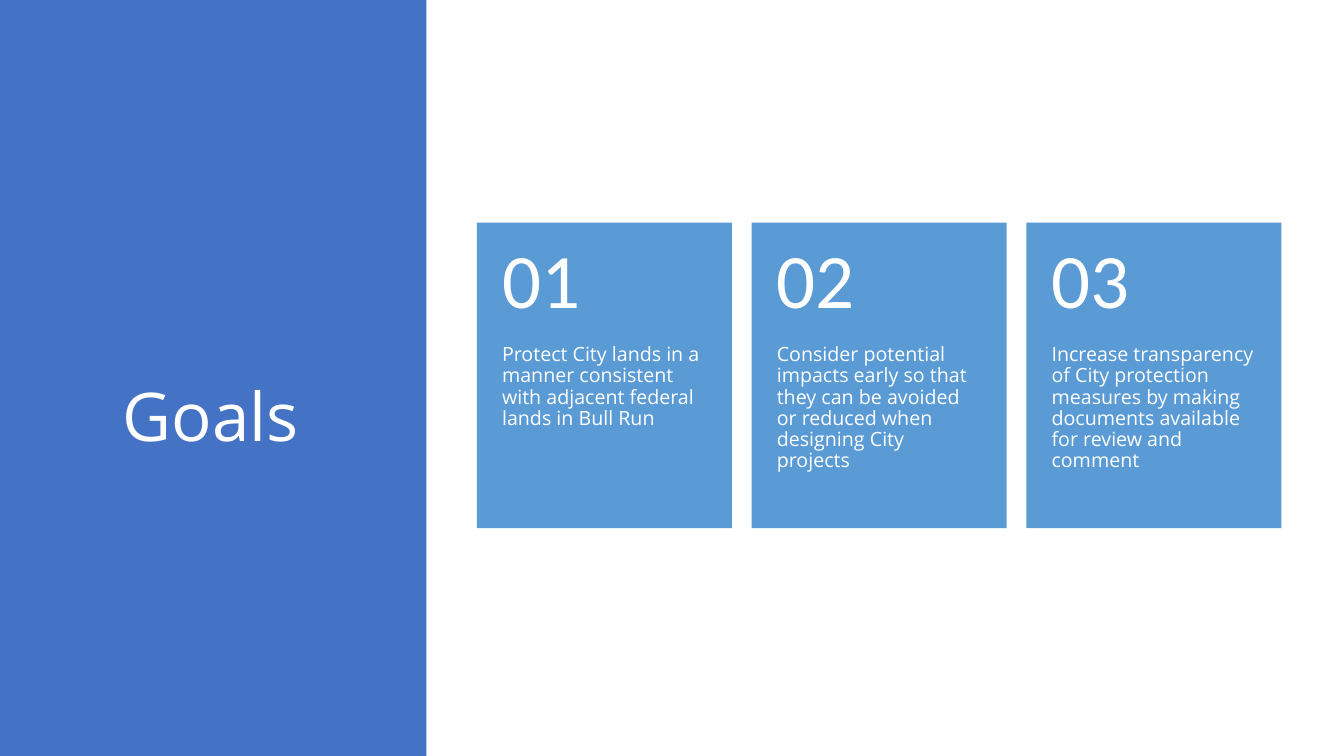
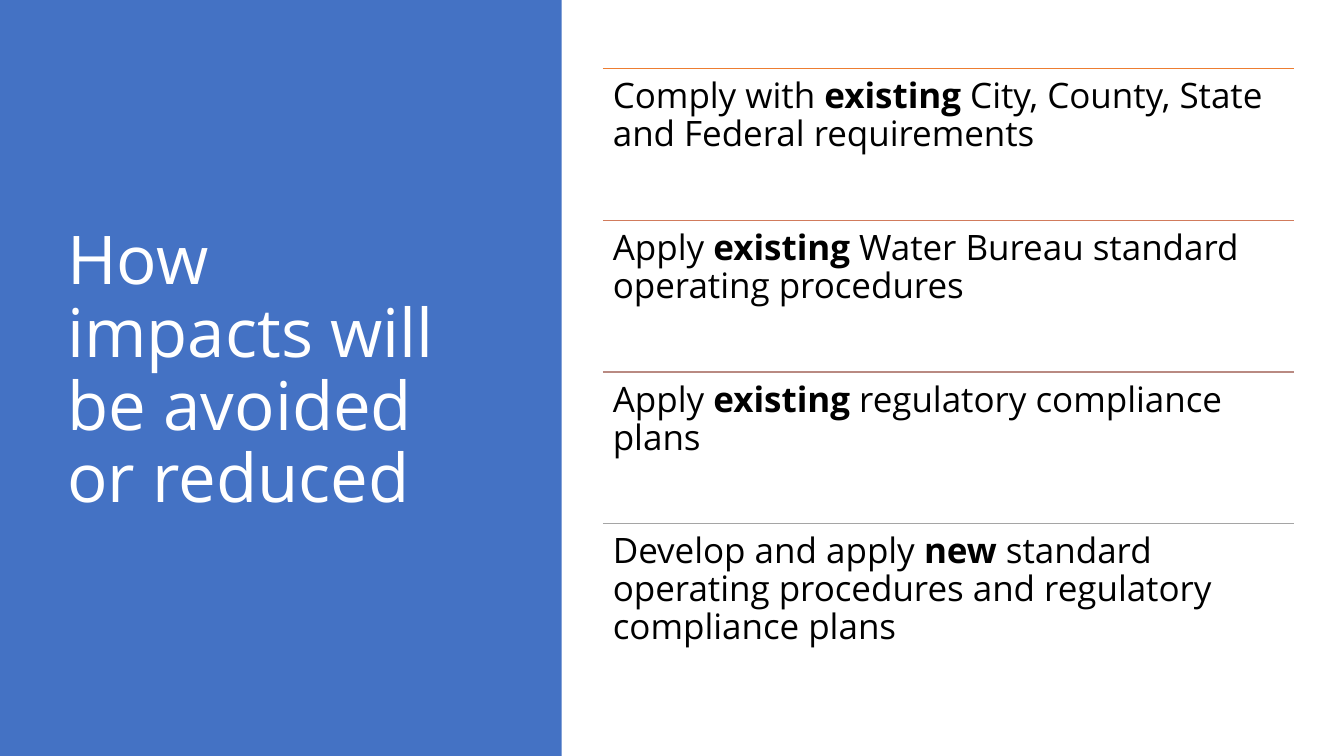
import pptx
import pptx.dml.color
import pptx.enum.shapes
import pptx.enum.text
import pptx.oxml.ns
import pptx.util
from lxml import etree

Inches = pptx.util.Inches
Pt = pptx.util.Pt
ALIGN = pptx.enum.text.PP_ALIGN
ANCHOR = pptx.enum.text.MSO_ANCHOR

SLIDE_WIDTH, SLIDE_HEIGHT = 13.33, 7.5
PANEL_BLUE, CARD_BLUE = "4472C4", "5B9BD5"
WHITE, BLACK = "FFFFFF", "000000"
FONT, NUMBER_FONT = "Open Sans", "Calibri"

GOALS = [
    "Protect City lands in a manner consistent with adjacent federal lands in Bull Run",
    "Consider potential impacts early so that they can be avoided or reduced when "
    "designing City projects",
    "Increase transparency of City protection measures by making documents available "
    "for review and comment",
]

# Words between asterisks are bold.
MEASURES = [
    ("ED7D31", "Comply with *existing* City, County, State and Federal requirements"),
    ("D17B5C", "Apply *existing* Water Bureau standard operating procedures"),
    ("B98A82", "Apply *existing* regulatory compliance plans"),
    ("A5A5A5", "Develop and apply *new* standard operating procedures and regulatory "
               "compliance plans"),
]


def rgb(color):
    return pptx.dml.color.RGBColor.from_string(color)


def add_text(slide, text, left, top, width, height, *, size, color=WHITE, font=FONT,
             align=ALIGN.LEFT, anchor=ANCHOR.TOP, insets=(0.1, 0.05, 0.1, 0.05)):
    """Add a wrapped text box; insets run left, top, right, bottom."""
    box = slide.shapes.add_textbox(Inches(left), Inches(top), Inches(width), Inches(height))
    frame = box.text_frame
    frame.word_wrap = True
    frame.vertical_anchor = anchor
    (frame.margin_left, frame.margin_top,
     frame.margin_right, frame.margin_bottom) = map(Inches, insets)
    paragraph = frame.paragraphs[0]
    paragraph.alignment = align
    paragraph.line_spacing = 0.9
    for index, part in enumerate(text.split("*")):
        run = paragraph.add_run()
        run.text = part
        run.font.name = font
        run.font.size = Pt(size)
        run.font.bold = index % 2 == 1
        run.font.color.rgb = rgb(color)


def add_block(slide, left, top, width, height, color):
    block = slide.shapes.add_shape(
        pptx.enum.shapes.MSO_SHAPE.RECTANGLE,
        Inches(left), Inches(top), Inches(width), Inches(height))
    block.shadow.inherit = False
    block.fill.solid()
    block.fill.fore_color.rgb = rgb(color)
    block.line.fill.background()


def add_rule(slide, left, top, width, color):
    rule = slide.shapes.add_connector(
        pptx.enum.shapes.MSO_CONNECTOR.STRAIGHT,
        Inches(left), Inches(top), Inches(left + width), Inches(top))
    rule.line.color.rgb = rgb(color)
    rule.line.width = Pt(1)
    etree.SubElement(rule._element.spPr, pptx.oxml.ns.qn("a:effectLst"))


def add_panel_slide(deck, panel_width, title, title_area, **title_format):
    """Add a slide with a blue panel on the left that holds the title."""
    slide = deck.slides.add_slide(deck.slide_layouts[6])
    add_block(slide, 0, 0, panel_width, SLIDE_HEIGHT, PANEL_BLUE)
    add_text(slide, title, *title_area, size=48, **title_format)
    return slide


def add_goal_card(slide, number, goal, left):
    top, width, height, number_height = 2.21, 2.53, 3.03, 1.21
    add_block(slide, left, top, width, height, CARD_BLUE)
    add_text(slide, f"{number:02}", left, top, width, number_height, size=55,
             font=NUMBER_FONT, anchor=ANCHOR.MIDDLE, insets=(0.25, 0.18, 0.25, 0.18))
    add_text(slide, goal, left, top + number_height, width, height - number_height,
             size=14, insets=(0.25, 0, 0.25, 0.36))


def add_measure(slide, measure, color, top, height):
    left, width = 5.98, 6.85
    add_rule(slide, left, top, width, color)
    add_text(slide, measure, left, top, width, height, size=25, color=BLACK,
             insets=(0.1, 0.1, 0.1, 0.1))


def build_goals(deck):
    slide = add_panel_slide(deck, 4.23, "Goals", (0.34, 3.76, 3.5, 3), align=ALIGN.CENTER)
    first_left, pitch = 4.73, 2.725
    for index, goal in enumerate(GOALS):
        add_goal_card(slide, index + 1, goal, first_left + index * pitch)


def build_measures(deck):
    top, height = 0.68, 6.02
    slide = add_panel_slide(deck, 5.57, "How impacts will be avoided or reduced",
                            (0.57, top, 4.16, height), anchor=ANCHOR.MIDDLE)
    row_height = height / len(MEASURES)
    for index, (color, measure) in enumerate(MEASURES):
        add_measure(slide, measure, color, top + index * row_height, row_height)


def main():
    deck = pptx.Presentation()
    deck.slide_width = Inches(SLIDE_WIDTH)
    deck.slide_height = Inches(SLIDE_HEIGHT)
    build_goals(deck)
    build_measures(deck)
    deck.save("out.pptx")


if __name__ == "__main__":
    main()
